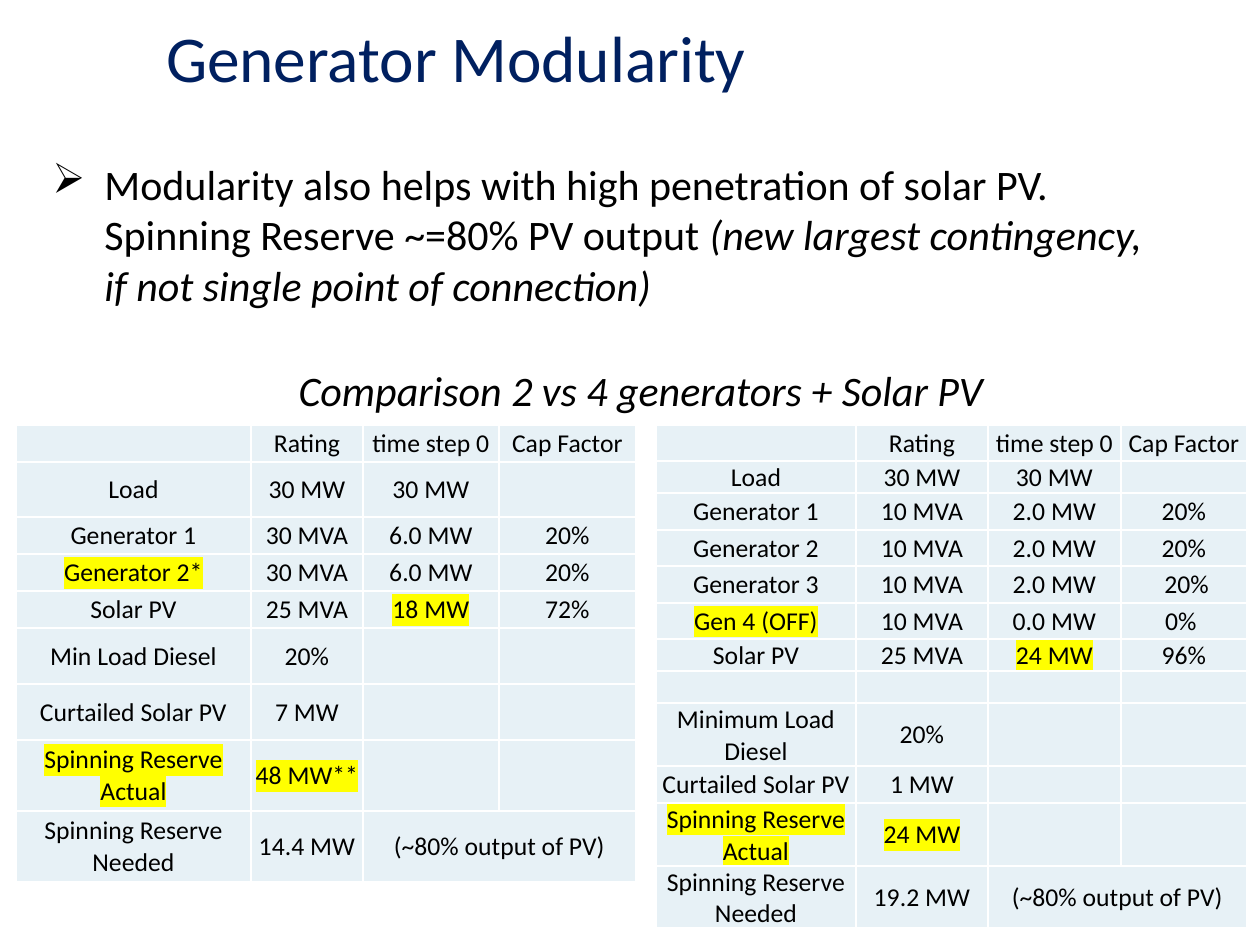
from lxml import etree
from pptx import Presentation
from pptx import util as u
from pptx.dml.color import RGBColor
from pptx.enum import text
from pptx.oxml.ns import qn

TITLE = "Generator Modularity"
BULLET = [
    ("Modularity also helps with high penetration of solar PV. Spinning Reserve ~=80% PV output ", False),
    ("(new largest contingency, ", True),
    ("\n", True),
    ("if not single point of connection)", True),
]
CAPTION = [("Comparison 2 vs 4 generators + Solar PV", True)]
HEADER = ("", "Rating", "time step 0", "Cap Factor")
HIGHLIGHTED = {"Generator 2*", "18 MW", "48 MW**", "Gen 4 (OFF)", "24 MW", "Spinning Reserve Actual"}
TABLES = [
    {
        "left": 16,
        "columns": (235, 112, 136, 137),
        "rows": [
            (37, *HEADER),
            (55, "Load", "30 MW", "30 MW", ""),
            (37, "Generator 1", "30 MVA", "6.0 MW", "20%"),
            (37, "Generator 2*", "30 MVA", "6.0 MW", "20%"),
            (37, "Solar PV", "25 MVA", "18 MW", "72%"),
            (56, "Min Load Diesel", "20%", "", ""),
            (56, "Curtailed Solar PV", "7 MW", "", ""),
            (71, "Spinning Reserve Actual", "48 MW**", "", ""),
            (71, "Spinning Reserve Needed", "14.4 MW", "(~80% output of PV)", ""),
        ],
    },
    {
        "left": 656,
        "columns": (200, 132, 133, 126),
        "rows": [
            (36, *HEADER),
            (32, "Load", "30 MW", "30 MW", ""),
            (37, "Generator 1", "10 MVA", "2.0 MW", "20%"),
            (36, "Generator 2", "10 MVA", "2.0 MW", "20%"),
            (37, "Generator 3", "10 MVA", "2.0 MW", " 20%"),
            (36, "Gen 4 (OFF)", "10 MVA", "0.0 MW", "0% "),
            (32, "Solar PV", "25 MVA", "24 MW", "96%"),
            (32, "", "", "", ""),
            (63, "Minimum Load Diesel", "20%", "", ""),
            (37, "Curtailed Solar PV", "1 MW", "", ""),
            (63, "Spinning Reserve Actual", "24 MW", "", ""),
            (61, "Spinning Reserve Needed", "19.2 MW", "(~80% output of PV)", ""),
        ],
    },
]
TABLE_TOP = 425
FONT = "Calibri"
CELL_FILL, BORDER, YELLOW = "E7F1F6", "FFFFFF", "FFFF00"


def px(value):
    return u.Inches(value / 168)


def colour(value):
    return RGBColor.from_string(value)


def add_colour(parent, value):
    etree.SubElement(parent, qn("a:srgbClr"), val=value)


def write(paragraph, runs, size, ink="000000", align=text.PP_ALIGN.LEFT, highlight=None):
    paragraph.alignment = align
    for words, italic in runs:
        if words == "\n":
            paragraph.add_line_break()
            continue
        run = paragraph.add_run()
        run.text = words
        run.font.size = u.Pt(size)
        run.font.italic = italic
        run.font.color.rgb = colour(ink)
        if highlight:
            add_colour(etree.SubElement(run.font._element, qn("a:highlight")), highlight)
        run.font.name = FONT


def add_text_box(slide, box, runs, bullet=None):
    shape = slide.shapes.add_textbox(*map(px, box))
    frame = shape.text_frame
    frame.word_wrap = True
    frame.auto_size = text.MSO_AUTO_SIZE.SHAPE_TO_FIT_TEXT
    paragraph = frame.paragraphs[0]
    if bullet:
        properties = paragraph._p.get_or_add_pPr()
        properties.set("marL", str(px(52)))
        properties.set("indent", str(-px(52)))
        etree.SubElement(properties, qn("a:buChar"), char=bullet)
    write(paragraph, runs, 18)


def format_cell(cell, words):
    cell.margin_left = cell.margin_right = cell.margin_top = px(1)
    cell.margin_bottom = 0
    cell.vertical_anchor = text.MSO_ANCHOR.MIDDLE
    properties = cell._tc.get_or_add_tcPr()
    for side in ("lnL", "lnR", "lnT", "lnB"):
        line = etree.SubElement(properties, qn(f"a:{side}"), w=str(u.Pt(1)))
        add_colour(etree.SubElement(line, qn("a:solidFill")), BORDER)
    cell.fill.solid()
    cell.fill.fore_color.rgb = colour(CELL_FILL)
    paragraph = cell.text_frame.paragraphs[0]
    if words:
        write(paragraph, [(words, False)], 11, align=text.PP_ALIGN.CENTER,
              highlight=YELLOW if words in HIGHLIGHTED else None)
    else:
        etree.SubElement(paragraph._p, qn("a:endParaRPr"), sz="1100")


def add_comparison(slide, left, columns, rows):
    heights = [row[0] for row in rows]
    frame = slide.shapes.add_table(len(rows), len(columns), px(left), px(TABLE_TOP),
                                   px(sum(columns)), px(sum(heights)))
    table = frame.table
    for column, width in zip(table.columns, columns):
        column.width = px(width)
    for row, (height, *values) in zip(table.rows, rows):
        row.height = px(height)
        for cell, words in zip(row.cells, values):
            format_cell(cell, words)
    last = len(rows) - 1
    table.cell(last, 2).merge(table.cell(last, 3))


def main():
    presentation = Presentation()
    presentation.slide_width, presentation.slide_height = px(1260), px(945)
    slide = presentation.slides.add_slide(presentation.slide_layouts[5])

    title = slide.shapes.title
    title.left, title.top, title.width, title.height = map(px, (166, 17, 1060, 54))
    frame = title.text_frame
    frame.margin_left = frame.margin_right = frame.margin_top = frame.margin_bottom = 0
    frame.vertical_anchor = text.MSO_ANCHOR.TOP
    frame.auto_size = text.MSO_AUTO_SIZE.NONE
    write(frame.paragraphs[0], [(TITLE, False)], 28, ink="002060")

    add_text_box(slide, (36, 150, 1178, 170), BULLET, bullet="➢")
    for table in TABLES:
        add_comparison(slide, **table)
    add_text_box(slide, (282, 356, 734, 67), CAPTION)
    presentation.save("out.pptx")


if __name__ == "__main__":
    main()
